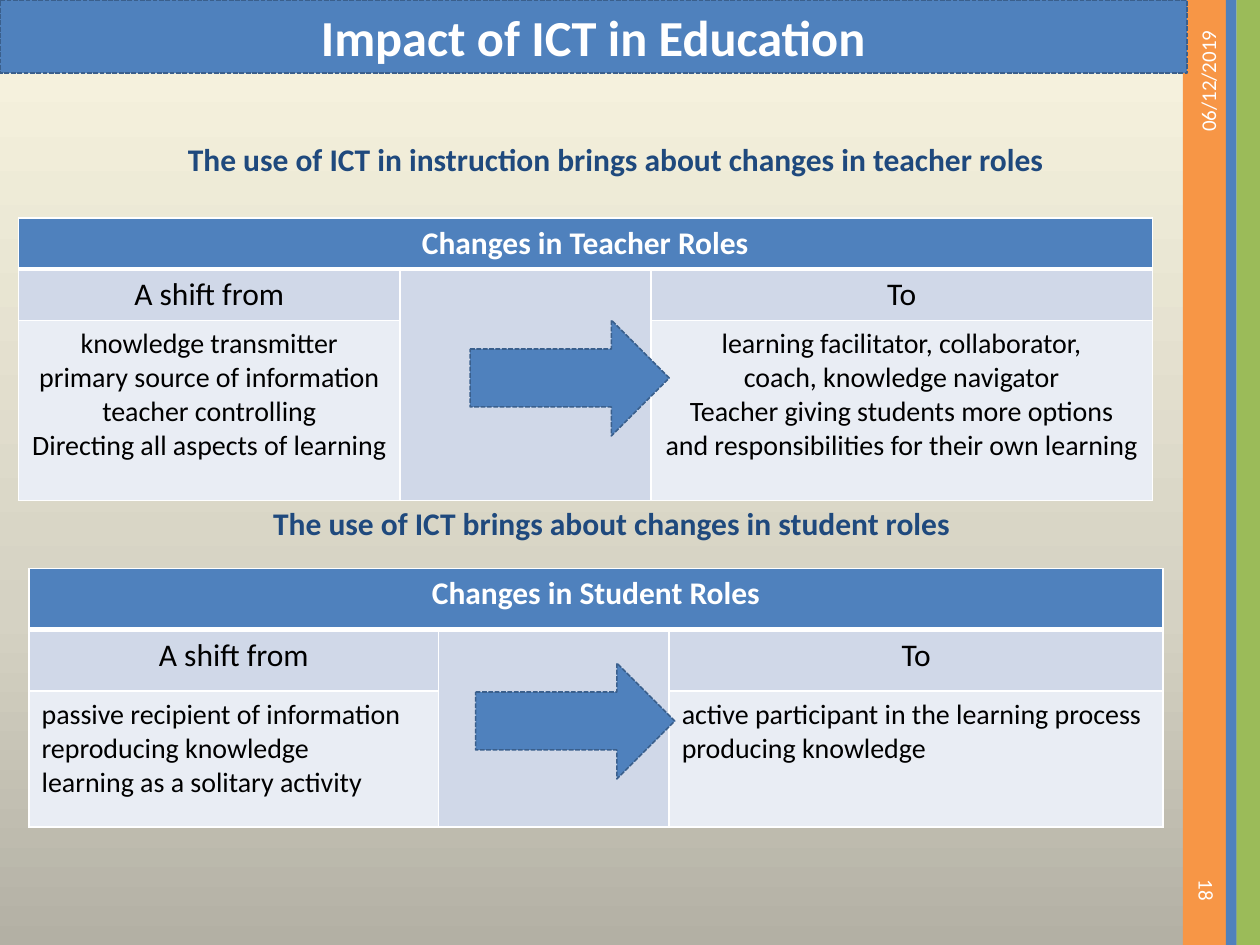
from copy import deepcopy
from dataclasses import dataclass

from lxml.etree import SubElement
from pptx import Presentation
from pptx.dml.color import RGBColor as Rgb
from pptx.enum.dml import MSO_LINE as Dash
from pptx.enum.shapes import MSO_SHAPE as Preset
from pptx.enum.text import MSO_ANCHOR as Anchor, PP_ALIGN as Align
from pptx.oxml.ns import qn
from pptx.util import Pt

COLORS = {
    "blue": "4F81BD", "outline": "3A5F8C", "orange": "F79646", "green": "9BBB59",
    "navy": "1F497D", "white": "FFFFFF", "black": "000000",
    "band": "D0D8E8", "pale": "E9EDF4",
}
BACKGROUND = [(0, "B3B0A4"), (0.35, "D5D2C3"), (1, "F9F5E0")]
HEADING = {"size": Pt(18), "bold": True}
LABEL = {"size": Pt(18), "bold": False}
BODY = {"size": Pt(16), "bold": False}
SMALL = {"size": Pt(12), "bold": False}
ARROW_SIZE = (113.8, 66.2)


@dataclass
class Stripe:
    left: float
    width: float
    color: str


@dataclass
class Note:
    text: str
    box: tuple
    style: dict
    color: str
    align: Align = Align.CENTER
    anchor: Anchor = Anchor.MIDDLE
    rotation: int = 0


@dataclass
class RoleTable:
    title: str
    before: list
    after: list
    left: float
    top: float
    columns: tuple
    rows: tuple
    align: Align
    arrow: tuple


STRIPES = [
    Stripe(675.9, 25.2, "orange"),
    Stripe(706.5, 13.5, "green"),
    Stripe(700.5, 6, "blue"),
]
NOTES = [
    Note("The use of ICT in instruction brings about changes in teacher roles",
         (28, 76.3, 648, 48), HEADING, "navy", anchor=Anchor.TOP),
    Note("The use of ICT brings about changes in student roles",
         (-1.4, 281, 702, 36), HEADING, "navy"),
    Note("06/12/2019", (606.2, 80, 168, 28.8), SMALL, "white", Align.RIGHT, rotation=270),
    Note("18", (651.6, 469.4, 76.3, 28.8), SMALL, "white", Align.RIGHT, rotation=90),
]
TABLES = [
    RoleTable(
        "Changes in Teacher Roles",
        ["knowledge transmitter", "primary source of information",
         "teacher controlling", "Directing all aspects of learning"],
        ["learning facilitator, collaborator,", "coach, knowledge navigator",
         "Teacher giving students more options",
         "and responsibilities for their own learning"],
        10.5, 124.6, (218.2, 143.3, 286.5), (29.2, 29.2, 103), Align.CENTER,
        (268.6, 182.9)),
    RoleTable(
        "Changes in Student Roles",
        ["passive recipient of information", "reproducing knowledge",
         "learning as a solitary activity"],
        ["active participant in the learning process", "producing knowledge"],
        16.6, 324.9, (234, 131.8, 282.2), (35, 35, 77.8), Align.LEFT,
        (271.8, 378.9)),
]


def color_of(name: str) -> Rgb:
    return Rgb.from_string(COLORS[name])


def write(frame, lines: list, style: dict, color: str, align: Align) -> None:
    for index, line in enumerate(lines):
        para = frame.paragraphs[0] if index == 0 else frame.add_paragraph()
        para.alignment = align
        span = para.add_run()
        span.text = line
        for name, value in {"name": "Calibri", **style}.items():
            setattr(span.font, name, value)
        span.font.color.rgb = color_of(color)


def paint(shape, color: str, outlined: bool = False) -> None:
    """Fill a shape, with either a dashed outline or none."""
    shape.fill.solid()
    shape.fill.fore_color.rgb = color_of(color)
    if not outlined:
        shape.line.fill.background()
        return
    shape.line.color.rgb = color_of("outline")
    shape.line.width = Pt(0.9)
    shape.line.dash_style = Dash.SQUARE_DOT


def add_preset(page, preset: Preset, box: tuple, color: str, outlined: bool = False) -> None:
    shape = page.shapes.add_shape(preset, *map(Pt, box))
    shape.shadow.inherit = False
    paint(shape, color, outlined)


def add_note(page, note: Note) -> None:
    box = page.shapes.add_textbox(*map(Pt, note.box))
    box.rotation = note.rotation
    box.text_frame.word_wrap = True
    box.text_frame.vertical_anchor = note.anchor
    write(box.text_frame, [note.text], note.style, note.color, note.align)


def format_cell(cell, fill: str, bottom: float = 1) -> None:
    """Give a cell white borders and a fill; borders must come first in the XML."""
    properties = cell._tc.get_or_add_tcPr()
    for tag, width in {"a:lnL": 1, "a:lnR": 1, "a:lnT": 1, "a:lnB": bottom}.items():
        line = SubElement(properties, qn(tag), w=str(Pt(width)))
        SubElement(SubElement(line, qn("a:solidFill")), qn("a:srgbClr"), val=COLORS["white"])
    cell.fill.solid()
    cell.fill.fore_color.rgb = color_of(fill)


def add_role_table(page, roles: RoleTable) -> None:
    size = (sum(roles.columns), sum(roles.rows))
    table = page.shapes.add_table(3, 3, *map(Pt, (roles.left, roles.top, *size))).table
    for column, width in zip(table.columns, roles.columns):
        column.width = Pt(width)
    for row, height in zip(table.rows, roles.rows):
        row.height = Pt(height)
    table.cell(0, 0).merge(table.cell(0, 2))
    table.cell(1, 1).merge(table.cell(2, 1))

    for column in range(3):
        format_cell(table.cell(0, column), "blue", bottom=3)
        format_cell(table.cell(1, column), "band")
        format_cell(table.cell(2, column), "band" if column == 1 else "pale")

    write(table.cell(0, 0).text_frame, [roles.title], HEADING, "white", Align.CENTER)
    for column, label, lines in ((0, "A shift from", roles.before), (2, "To", roles.after)):
        write(table.cell(1, column).text_frame, [label], LABEL, "black", Align.CENTER)
        write(table.cell(2, column).text_frame, lines, BODY, "black", roles.align)
    add_preset(page, Preset.RIGHT_ARROW, (*roles.arrow, *ARROW_SIZE), "blue", outlined=True)


def set_background(page) -> None:
    fill = page.background.fill
    fill.gradient()
    fill.gradient_angle = 90
    stop_list = page.element.find(".//" + qn("a:gsLst"))
    stop_list.append(deepcopy(stop_list[-1]))
    for stop, (position, color) in zip(fill.gradient_stops, BACKGROUND):
        stop.position = position
        stop.color.rgb = Rgb.from_string(color)


def set_title(page) -> None:
    title = page.shapes.title
    place = {"left": 0, "top": 0, "width": 678.2, "height": 41.8}
    for name, value in place.items():
        setattr(title, name, Pt(value))
    paint(title, "blue", outlined=True)
    title.text_frame.vertical_anchor = Anchor.MIDDLE
    write(title.text_frame, ["Impact of ICT in Education"],
          {"size": Pt(28.8), "bold": True}, "white", Align.CENTER)
    page.shapes.element.append(title.element)  # in front of the stripes


def main() -> None:
    deck = Presentation()
    deck.slide_width, deck.slide_height = Pt(720), Pt(540)
    page = deck.slides.add_slide(deck.slide_layouts[5])
    set_background(page)
    for stripe in STRIPES:
        add_preset(page, Preset.RECTANGLE, (stripe.left, 0, stripe.width, 540), stripe.color)
    set_title(page)
    for roles in TABLES:
        add_role_table(page, roles)
    for note in NOTES:
        add_note(page, note)
    deck.save("out.pptx")


if __name__ == "__main__":
    main()
